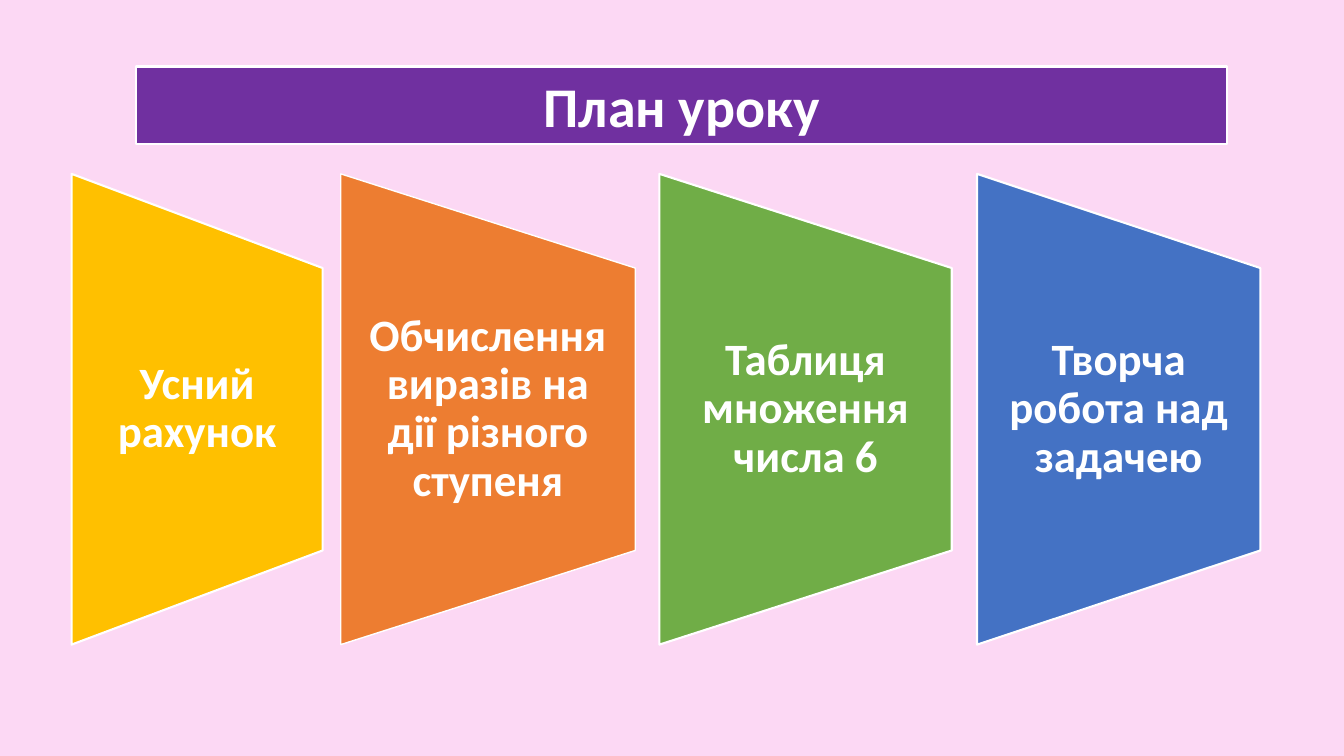
from pptx import Presentation
from pptx.dml.color import RGBColor
from pptx.enum.shapes import MSO_SHAPE as SHAPE
from pptx.enum.text import MSO_ANCHOR as ANCHOR, PP_ALIGN as ALIGN
from pptx.util import Inches, Pt

COLORS = {
    "background": "FCD8F4",
    "purple": "7030A0",
    "yellow": "FFC000",
    "orange": "ED7D31",
    "green": "70AD47",
    "blue": "4472C4",
    "white": "FFFFFF",
}
FONT = "Calibri"
STAGE_HEIGHT = 4.67
STAGE_MIDDLE = 4.06
LABEL_HEIGHT = 2.8

# left, width, colour, outline width, label
STAGES = [
    (0.71, 2.49, "yellow", 1.5, "Усний рахунок"),
    (3.38, 2.92, "orange", 1, "Обчислення виразів на дії різного ступеня"),
    (6.54, 2.9, "green", 1.5, "Таблиця множення числа 6"),
    (9.69, 2.81, "blue", 1.5, "Творча робота над задачею"),
]


def rgb(name):
    return RGBColor.from_string(COLORS[name])


def add_block(slide, kind, left, top, width, height, color, line_width):
    """Add a filled shape with a white outline."""
    sp = slide.shapes.add_shape(
        kind, Inches(left), Inches(top), Inches(width), Inches(height))
    sp.shadow.inherit = False
    sp.fill.solid()
    sp.fill.fore_color.rgb = rgb(color)
    sp.line.color.rgb = rgb("white")
    sp.line.width = Pt(line_width)
    return sp


def write(tf, text, size):
    """Put one bold, white, centred paragraph into a text frame."""
    tf.word_wrap = True
    tf.vertical_anchor = ANCHOR.MIDDLE
    p = tf.paragraphs[0]
    p.text = text
    p.alignment = ALIGN.CENTER
    p.font.name = FONT
    p.font.size = Pt(size)
    p.font.bold = True
    p.font.color.rgb = rgb("white")
    return p


def add_title(slide, text):
    sp = add_block(slide, SHAPE.RECTANGLE, 1.35, 0.66, 10.82, 0.77, "purple", 1.5)
    write(sp.text_frame, text, 40)


def add_stage(slide, left, width, color, line_width, label):
    """Add a trapezoid lying on its side, with an upright label over it."""
    sp = add_block(
        slide, SHAPE.FLOWCHART_MANUAL_OPERATION,
        left + (width - STAGE_HEIGHT) / 2, STAGE_MIDDLE - width / 2,
        STAGE_HEIGHT, width, color, line_width)
    sp.rotation = 270

    box = slide.shapes.add_textbox(
        Inches(left), Inches(STAGE_MIDDLE - LABEL_HEIGHT / 2),
        Inches(width), Inches(LABEL_HEIGHT))
    tf = box.text_frame
    tf.margin_left = tf.margin_right = Inches(0.22)
    tf.margin_top = tf.margin_bottom = 0
    write(tf, label, 32).line_spacing = 0.9


def main():
    prs = Presentation()
    prs.slide_width = Inches(13.33)
    prs.slide_height = Inches(7.5)
    s = prs.slides.add_slide(prs.slide_layouts[6])
    s.background.fill.solid()
    s.background.fill.fore_color.rgb = rgb("background")

    add_title(s, "План уроку")
    for stage in STAGES:
        add_stage(s, *stage)
    prs.save("out.pptx")


if __name__ == "__main__":
    main()
